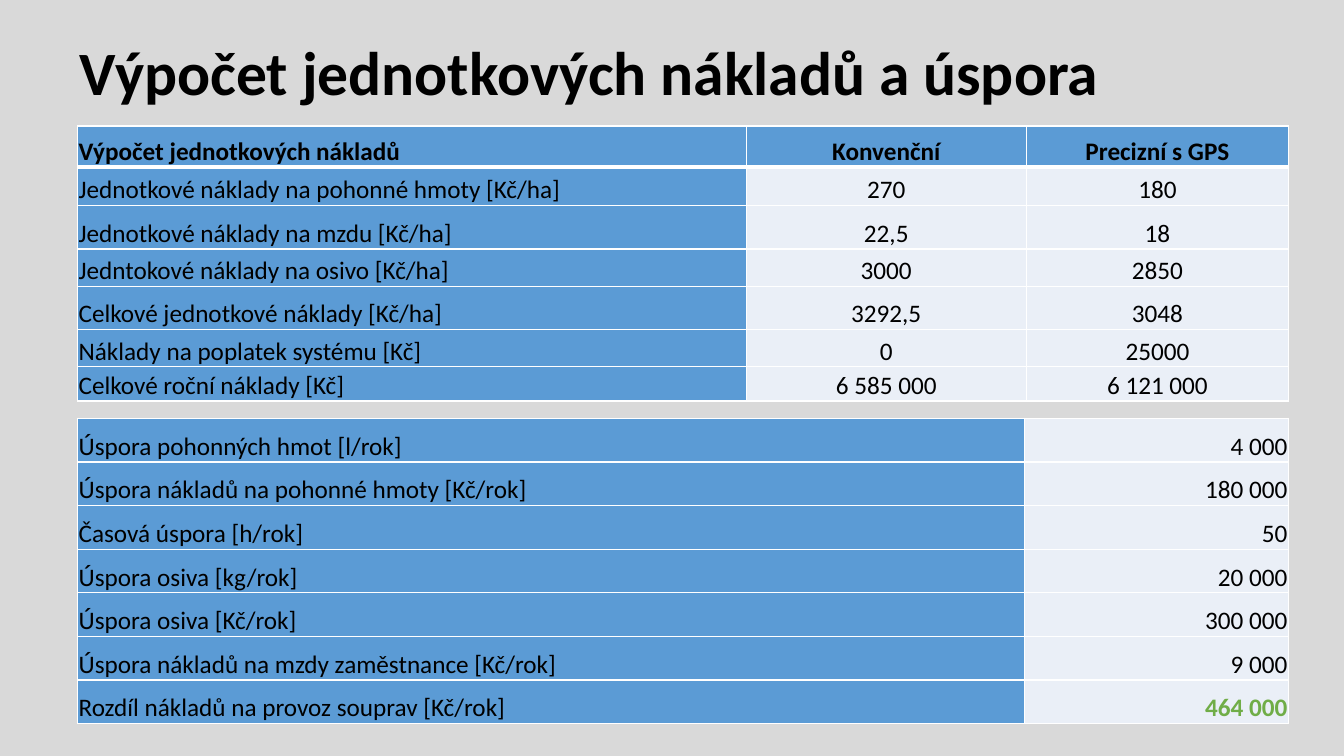
from lxml.etree import SubElement
from pptx import Presentation
from pptx.dml.color import RGBColor
from pptx.enum.text import MSO_ANCHOR, PP_ALIGN
from pptx.oxml.ns import qn
from pptx.util import Inches, Pt

UNIT_COSTS = [
    ("Výpočet jednotkových nákladů", "Konvenční", "Precizní s GPS"),
    ("Jednotkové náklady na pohonné hmoty [Kč/ha]", "270", "180"),
    ("Jednotkové náklady na mzdu [Kč/ha]", "22,5", "18"),
    ("Jedntokové náklady na osivo [Kč/ha]", "3000", "2850"),
    ("Celkové jednotkové náklady [Kč/ha]", "3292,5", "3048"),
    ("Náklady na poplatek systému [Kč]", "0", "25000"),
    ("Celkové roční náklady [Kč]", "6 585 000", "6 121 000"),
]
SAVINGS = [
    ("Úspora pohonných hmot [l/rok]", "4 000"),
    ("Úspora nákladů na pohonné hmoty [Kč/rok]", "180 000"),
    ("Časová úspora [h/rok]", "50"),
    ("Úspora osiva [kg/rok]", "20 000"),
    ("Úspora osiva [Kč/rok]", "300 000"),
    ("Úspora nákladů na mzdy zaměstnance [Kč/rok]", "9 000"),
    ("Rozdíl nákladů na provoz souprav [Kč/rok]", "464 000"),
]


def color(value):
    return RGBColor.from_string(value)


class CostSlide:
    FONT = "Calibri"
    TEXT = "000000"
    BACKGROUND = "D9D9D9"
    LABEL_FILL = "5B9BD5"
    VALUE_FILL = "EAEFF7"
    HIGHLIGHT = "70AD47"
    BORDER = "FFFFFF"

    def __init__(self, presentation):
        self.slide = presentation.slides.add_slide(presentation.slide_layouts[5])
        background = self.slide.background.fill
        background.solid()
        background.fore_color.rgb = color(self.BACKGROUND)

    def add_run(self, paragraph, text, size, bold=False, text_color=TEXT):
        run = paragraph.add_run()
        run.text = text
        run.font.name = self.FONT
        run.font.size = Pt(size)
        run.font.bold = bold
        run.font.color.rgb = color(text_color)

    def set_title(self, text, left, top, width, height):
        title = self.slide.shapes.title
        title.left, title.top = Inches(left), Inches(top)
        title.width, title.height = Inches(width), Inches(height)
        title.text_frame.vertical_anchor = MSO_ANCHOR.MIDDLE
        title.text_frame.word_wrap = True
        paragraph = title.text_frame.paragraphs[0]
        paragraph.alignment = PP_ALIGN.LEFT
        paragraph.line_spacing = 0.9
        self.add_run(paragraph, text, 44, bold=True)

    def set_borders(self, cell, top, bottom):
        """Draw the four cell edges, with top and bottom widths in points."""
        properties = cell._tc.get_or_add_tcPr()
        for edge, width in (("L", 1), ("R", 1), ("T", top), ("B", bottom)):
            line = SubElement(properties, qn(f"a:ln{edge}"), w=str(Pt(width)))
            fill = SubElement(line, qn("a:solidFill"))
            SubElement(fill, qn("a:srgbClr"), val=self.BORDER)

    def fill_cell(self, cell, text, is_label, alignment, bold, text_color):
        cell.fill.solid()
        cell.fill.fore_color.rgb = color(self.LABEL_FILL if is_label else self.VALUE_FILL)
        cell.vertical_anchor = MSO_ANCHOR.BOTTOM
        cell.margin_left = cell.margin_right = cell.margin_top = Inches(0.01)
        cell.margin_bottom = Inches(0)
        paragraph = cell.text_frame.paragraphs[0]
        paragraph.alignment = alignment
        self.add_run(paragraph, text, 18, bold, text_color)

    def add_table(self, rows, top, widths, heights, value_alignment,
                  has_header=False, highlight=None):
        """Add a table of labels and values; highlight is one (row, column)."""
        frame = self.slide.shapes.add_table(
            len(rows), len(widths), Inches(0.77), Inches(top),
            Inches(sum(widths)), Inches(sum(heights)))
        table = frame.table
        table.first_row = has_header
        table.horz_banding = False
        for column, width in zip(table.columns, widths):
            column.width = Inches(width)
        for row, height in zip(table.rows, heights):
            row.height = Inches(height)
        for row_index, row in enumerate(rows):
            is_header = has_header and row_index == 0
            below_header = has_header and row_index == 1
            for column_index, text in enumerate(row):
                cell = table.cell(row_index, column_index)
                is_highlight = (row_index, column_index) == highlight
                self.set_borders(cell, 3 if below_header else 1, 3 if is_header else 1)
                self.fill_cell(
                    cell, text,
                    is_label=is_header or column_index == 0,
                    alignment=value_alignment if column_index else PP_ALIGN.LEFT,
                    bold=is_header or is_highlight,
                    text_color=self.HIGHLIGHT if is_highlight else self.TEXT)


def main():
    presentation = Presentation()
    presentation.slide_width = Inches(13.33)
    presentation.slide_height = Inches(7.5)
    slide = CostSlide(presentation)
    slide.set_title("Výpočet jednotkových nákladů a úspora", 0.69, -0.02, 10.68, 1.54)
    slide.add_table(UNIT_COSTS, 1.25, [6.63, 2.78, 2.6],
                    [0.41, 0.38, 0.43, 0.37, 0.43, 0.37, 0.34],
                    PP_ALIGN.CENTER, has_header=True)
    slide.add_table(SAVINGS, 4.15, [9.39, 2.62], [3.03 / len(SAVINGS)] * len(SAVINGS),
                    PP_ALIGN.RIGHT, highlight=(len(SAVINGS) - 1, 1))
    presentation.save("out.pptx")


if __name__ == "__main__":
    main()
